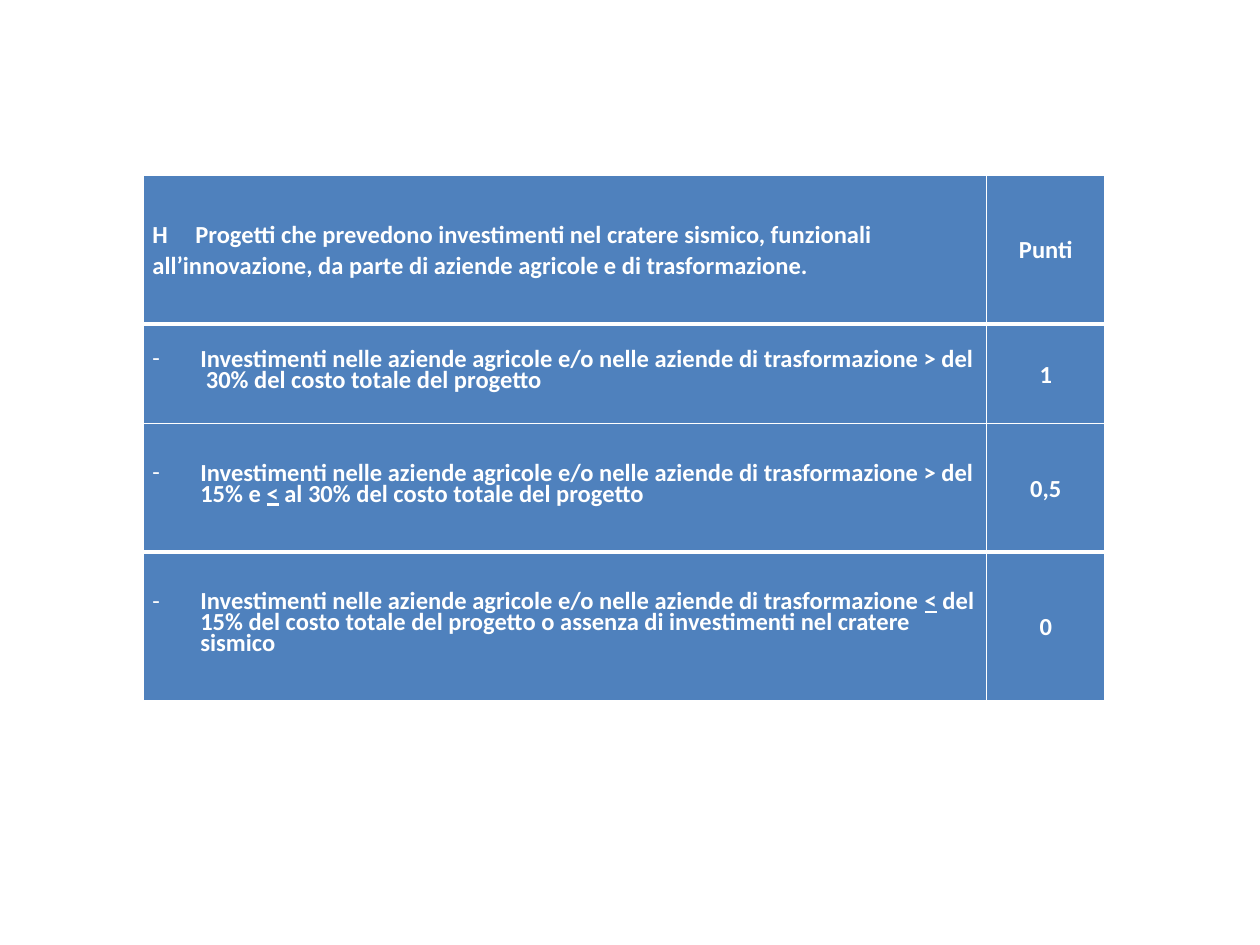
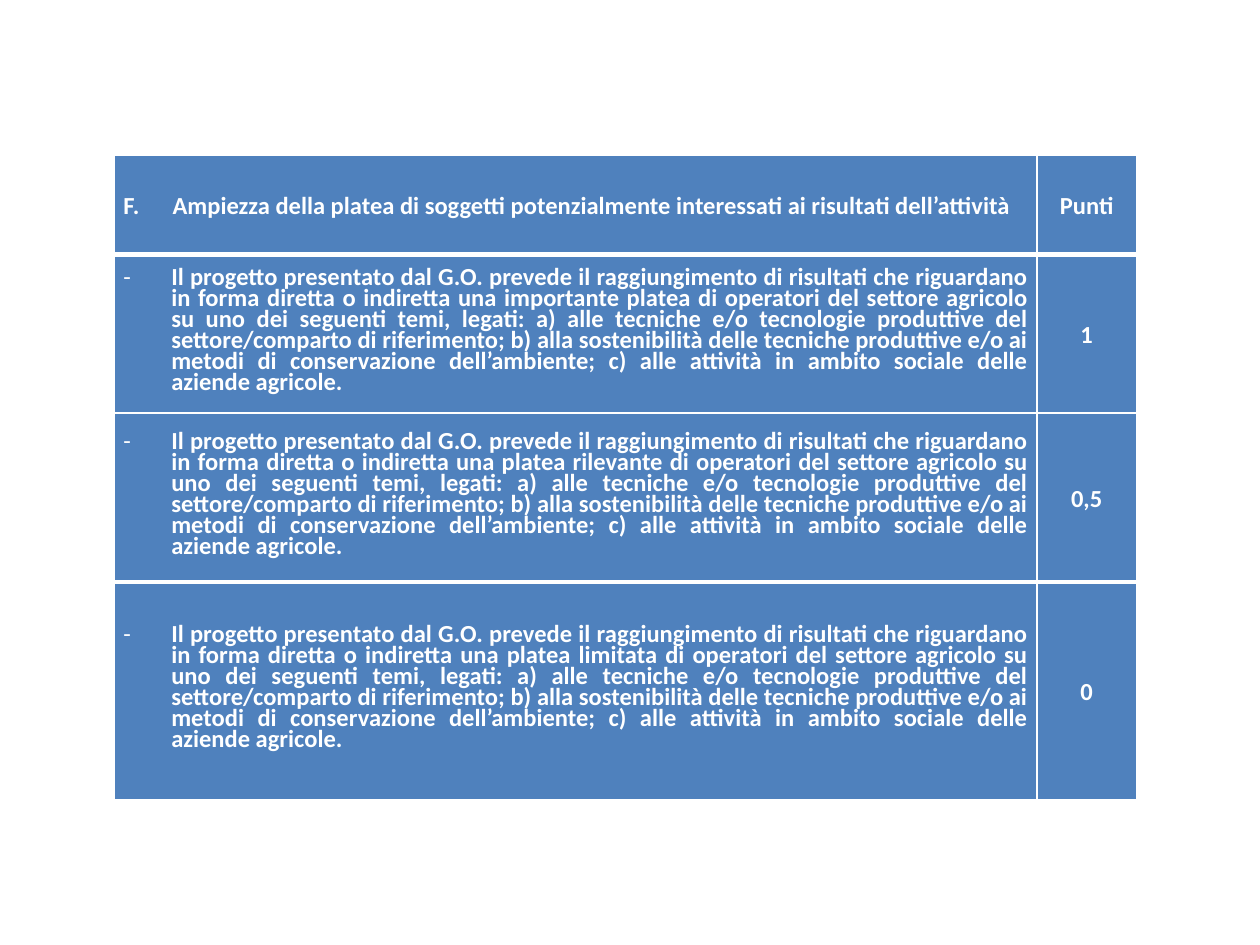
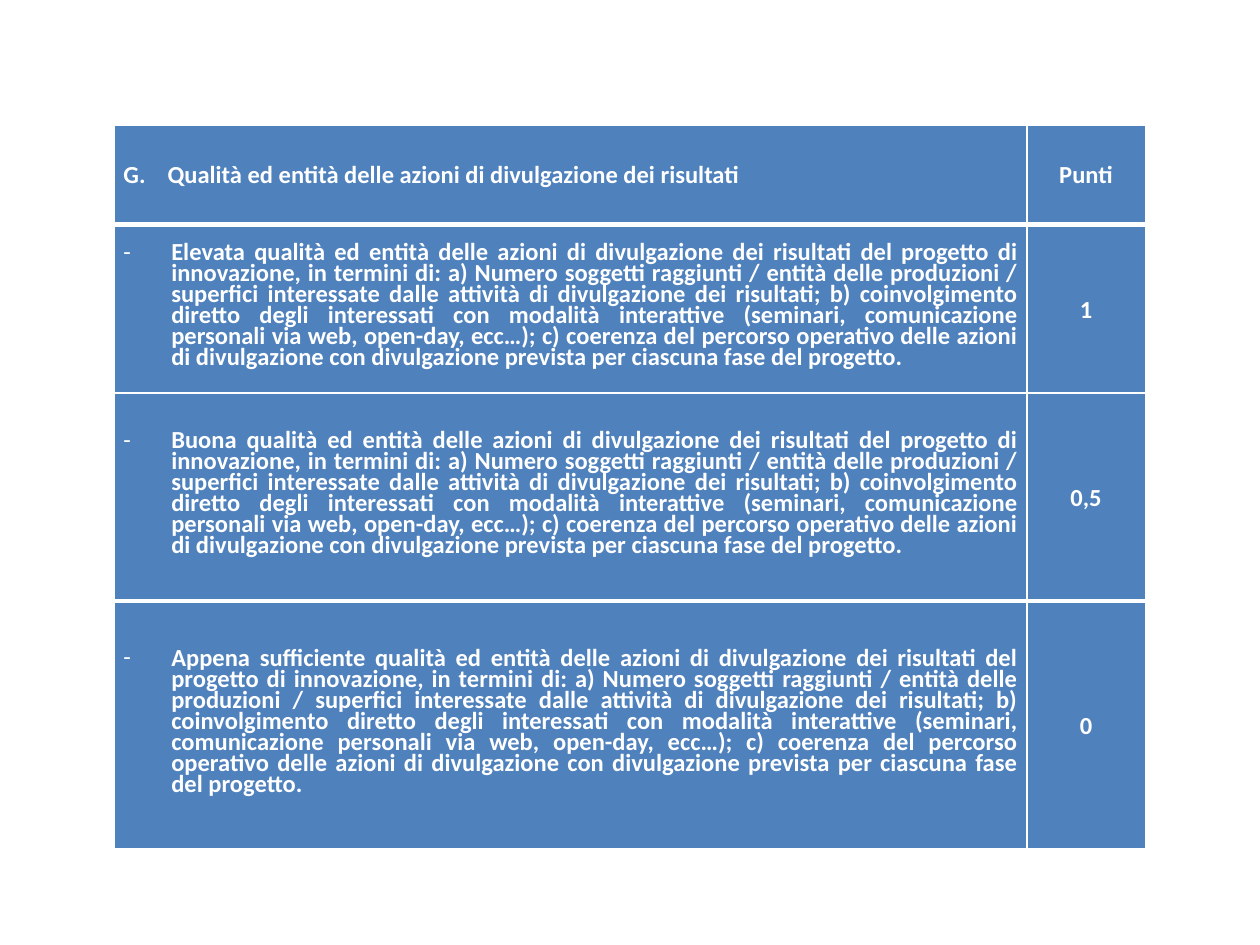
import pptx
import pptx.dml.color
import pptx.enum.text
import pptx.oxml.ns
import pptx.util
from lxml import etree

RGBColor = pptx.dml.color.RGBColor
Pt = pptx.util.Pt
ALIGN = pptx.enum.text.PP_ALIGN
qn = pptx.oxml.ns.qn

BLUE = RGBColor(0x4F, 0x81, 0xBD)
WHITE = RGBColor(0xFF, 0xFF, 0xFF)
COLUMNS, ROWS = 100, 75
POINTS = ["1", "0,5", "0"]

AUDIENCE = (
    "Il progetto presentato dal G.O. prevede il raggiungimento di risultati che riguardano "
    "in forma diretta o indiretta una {} di operatori del settore agricolo su uno dei "
    "seguenti temi, legati: a) alle tecniche e/o tecnologie produttive del settore/comparto "
    "di riferimento; b) alla sostenibilità delle tecniche produttive e/o ai metodi di "
    "conservazione dell’ambiente; c) alle attività in ambito sociale delle aziende agricole."
)
OUTREACH = (
    "{} qualità ed entità delle azioni di divulgazione dei risultati del progetto di "
    "innovazione, in termini di: a) Numero soggetti raggiunti / entità delle produzioni / "
    "superfici interessate dalle attività di divulgazione dei risultati; b) coinvolgimento "
    "diretto degli interessati con modalità interattive (seminari, comunicazione personali "
    "via web, open-day, ecc…); c) coerenza del percorso operativo delle azioni di "
    "divulgazione con divulgazione prevista per ciascuna fase del progetto."
)
INVESTMENT = "Investimenti nelle aziende agricole e/o nelle aziende di trasformazione {}"


class Deck:
    font, size = "Calibri", Pt(14)
    thin, thick = Pt(1), Pt(3)

    def __init__(self):
        self.prs = pptx.Presentation()
        self.prs.slide_width = pptx.util.Inches(10)
        self.prs.slide_height = pptx.util.Inches(7.5)
        self.slide = None

    def x(self, columns):
        return round(self.prs.slide_width * columns / COLUMNS)

    def y(self, rows):
        return round(self.prs.slide_height * rows / ROWS)

    def new_slide(self):
        self.slide = self.prs.slides.add_slide(self.prs.slide_layouts[6])

    def score_table(self, left, top, widths, heights, label, label_tab, title, criteria,
                    align=ALIGN.JUSTIFY):
        """Add a table of criteria and their points; lengths are in grid units."""
        frame = self.slide.shapes.add_table(
            len(heights), len(widths), self.x(left), self.y(top),
            self.x(sum(widths)), self.y(sum(heights)))
        table = frame.table
        table.first_row = table.horz_banding = False
        for column, width in zip(table.columns, widths):
            column.width = self.x(width)
        for row, height in zip(table.rows, heights):
            row.height = self.y(height)

        texts = [f"{label}\t{title}", *criteria]
        last = len(texts) - 1
        for i, (text, points) in enumerate(zip(texts, ["Punti", *POINTS])):
            edges = [self.thick if edge in (1, last) else self.thin for edge in (i, i + 1)]
            for j in range(2):
                self.style_cell(table.cell(i, j), *edges)
            p = self.cell_text(table.cell(i, 0), text, align)
            if i == 0:
                self.tab_stop(p, label_tab)
            else:
                self.dash(p)
            self.cell_text(table.cell(i, 1), points, ALIGN.CENTER)

    def style_cell(self, cell, top, bottom):
        """Set fill, margins and borders, given the widths of the top and bottom borders."""
        cell.margin_left = cell.margin_right = self.x(0.7)
        cell.margin_top = cell.margin_bottom = 0
        cell.vertical_anchor = pptx.enum.text.MSO_ANCHOR.MIDDLE
        tcPr = cell._tc.get_or_add_tcPr()
        borders = {"L": self.thin, "R": self.thin, "T": top, "B": bottom}
        for side, width in borders.items():
            ln = etree.SubElement(tcPr, qn(f"a:ln{side}"), w=str(int(width)))
            fill = etree.SubElement(ln, qn("a:solidFill"))
            etree.SubElement(fill, qn("a:srgbClr"), val=str(WHITE))
        cell.fill.solid()
        cell.fill.fore_color.rgb = BLUE

    def cell_text(self, cell, text, align):
        """Fill the cell; parts between underscores are underlined."""
        p = cell.text_frame.paragraphs[0]
        p.alignment = align
        p.line_spacing = 1.07
        p.space_before = p.space_after = Pt(3)
        for i, part in enumerate(text.split("_")):
            r = p.add_run()
            r.text = part
            r.font.name, r.font.size, r.font.bold = self.font, self.size, True
            r.font.color.rgb = WHITE
            if i % 2:
                r.font.underline = True
        return p

    def dash(self, p):
        p.line_spacing = Pt(12)
        indent = self.x(3.8)
        pPr = p._p.get_or_add_pPr()
        pPr.set("marL", str(indent))
        pPr.set("indent", str(-indent))
        etree.SubElement(pPr, qn("a:buFont"), typeface=self.font)
        etree.SubElement(pPr, qn("a:buChar"), char="-")

    def tab_stop(self, p, columns):
        tabs = etree.SubElement(p._p.get_or_add_pPr(), qn("a:tabLst"))
        etree.SubElement(tabs, qn("a:tab"), pos=str(self.x(columns)), algn="l")


def main():
    deck = Deck()

    deck.new_slide()
    deck.score_table(
        11.4, 13.9, [66.9, 9.4], [11.8, 7.9, 10.2, 11.8], "H", 3.4,
        "Progetti che prevedono investimenti nel cratere sismico, funzionali "
        "all’innovazione, da parte di aziende agricole e di trasformazione.",
        [INVESTMENT.format(share) for share in (
            "> del  30% del costo totale del progetto",
            "> del 15% e _<_ al 30% del costo totale del progetto",
            "_<_ del 15% del costo totale del progetto o assenza di investimenti "
            "nel cratere sismico")],
        align=ALIGN.LEFT)

    deck.new_slide()
    deck.score_table(
        9.1, 12.3, [73.2, 7.9], [7.9, 12.6, 13.4, 17.3], "F.", 3.9,
        "Ampiezza della platea di soggetti potenzialmente interessati ai risultati "
        "dell’attività",
        [AUDIENCE.format(reach) for reach in (
            "importante platea", "platea rilevante", "platea limitata")])

    deck.new_slide()
    deck.score_table(
        9.1, 9.9, [72.4, 9.4], [7.9, 13.4, 16.5, 19.7], "G.", 3.5,
        "Qualità ed entità delle azioni di divulgazione dei risultati",
        [OUTREACH.format(level) for level in ("Elevata", "Buona", "Appena sufficiente")])

    deck.prs.save("out.pptx")


if __name__ == "__main__":
    main()
